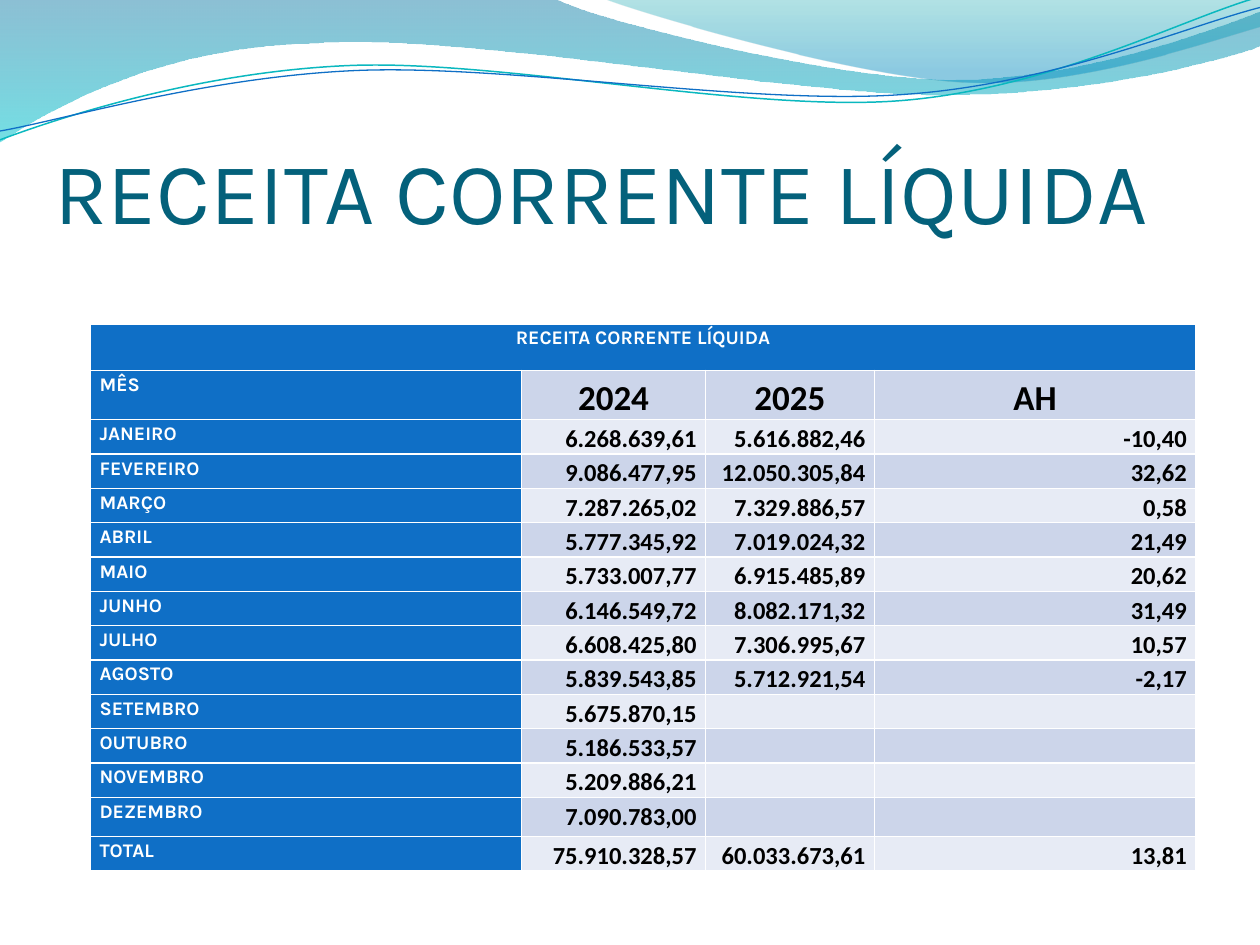
"""Build the net current revenue slide with its wave header and monthly table."""
from math import cos, radians, sin

from lxml import etree
from pptx import Presentation
from pptx.dml.color import RGBColor
from pptx.enum import text as tx
from pptx.oxml.ns import qn
from pptx.util import Inches, Pt

LEFT, MID, RIGHT = tx.PP_ALIGN.LEFT, tx.PP_ALIGN.CENTER, tx.PP_ALIGN.RIGHT
BLUE, WHITE, BLACK = "0F6FC6", "FFFFFF", "000000"
BANDS = ["E7EBF5", "CCD5EA"]
TILT = 2.7
TITLE = "RECEITA CORRENTE LÍQUIDA"
COLS = [3.42, 1.46, 1.34, 2.55]
ROWS = [0.37] * 2 + [0.24] * 7 + [0.26] * 2 + [0.24] * 2 + [0.31, 0.26]
DATA = [
    [TITLE, "", "", ""],
    ["MÊS", "2024", "2025", "AH"],
    ["JANEIRO", "6.268.639,61", "5.616.882,46", "-10,40"],
    ["FEVEREIRO", "9.086.477,95", "12.050.305,84", "32,62"],
    ["MARÇO", "7.287.265,02", "7.329.886,57", "0,58"],
    ["ABRIL", "5.777.345,92", "7.019.024,32", "21,49"],
    ["MAIO", "5.733.007,77", "6.915.485,89", "20,62"],
    ["JUNHO", "6.146.549,72", "8.082.171,32", "31,49"],
    ["JULHO", "6.608.425,80", "7.306.995,67", "10,57"],
    ["AGOSTO", "5.839.543,85", "5.712.921,54", "-2,17"],
    ["SETEMBRO", "5.675.870,15", "", ""],
    ["OUTUBRO", "5.186.533,57", "", ""],
    ["NOVEMBRO", "5.209.886,21", "", ""],
    ["DEZEMBRO", "7.090.783,00", "", ""],
    ["TOTAL", "75.910.328,57", "60.033.673,61", "13,81"],
]
WAVES = [
    ([[(0, 0)], [(4.4, -0.01)],
      [(4.76, 0.17), (6.64, 0.63), (7.58, 0.63)],
      [(8.53, 0.63), (9.58, 0.26), (10, 0.09)], [(10.01, 0.36)],
      [(9.83, 0.44), (8.7, 0.76), (7.46, 0.75)],
      [(6.22, 0.75), (3.82, 0.28), (2.57, 0.34)],
      [(1.29, 0.36), (0.46, 0.83), (-0.01, 1.13)]],
     [(0, "0074A1", 45), (1, "00C6CF", 55)]),
    ([[(4.79, -0.01)],
      [(5.09, 0.11), (6.82, 0.62), (7.69, 0.65)],
      [(8.56, 0.69), (9.61, 0.32), (10, 0.21)], [(10, 0)]],
     [(0, "00A1A9", 30), (0.8, "008BBF", 45)]),
]
CURVES = [
    ([[(0, 1.11)],
      [(0.48, 0.93), (1.58, 0.57), (2.77, 0.52)],
      [(3.95, 0.47), (5.93, 0.89), (7.13, 0.8)],
      [(8.33, 0.71), (9.38, 0.15), (9.98, -0.02)]], (4.99, 0.58), "0AB8BF", 0.85),
    ([[(0, 1.04)],
      [(0.47, 0.96), (1.64, 0.61), (2.83, 0.56)],
      [(4.03, 0.51), (5.97, 0.84), (7.17, 0.75)],
      [(8.36, 0.67), (9.41, 0.21), (10, 0.06)]], (5, 0.59), BLUE, 0.75),
]


def rgb(code):
    return RGBColor.from_string(code)


def write(frame, words, size=14, font="Calibri", color=BLACK, bold=False,
          align=LEFT, gap=None):
    para = frame.paragraphs[0]
    para.alignment, para.line_spacing = align, gap
    if not words:
        etree.SubElement(para._p, qn("a:endParaRPr"), sz=str(size * 100))
        return
    run = para.add_run()
    run.text = words
    run.font.size, run.font.name, run.font.bold = Pt(size), font, bold
    run.font.color.rgb = rgb(color)


def turn(point, hub):
    angle = radians(TILT)
    dx, dy = point[0] - hub[0], point[1] - hub[1]
    return (hub[0] + dx * cos(angle) - dy * sin(angle),
            hub[1] + dx * sin(angle) + dy * cos(angle))


class Deck:
    """Hold the style and the current slide."""

    def __init__(self):
        self.show = Presentation()
        self.show.slide_width, self.show.slide_height = Inches(10), Inches(7.5)
        self.slide = self.show.slides.add_slide(self.show.slide_layouts[5])
        self.label = dict(size=11, font="Karla", color=WHITE)

    def outline(self, steps, close):
        points = [(Inches(x), Inches(y)) for step in steps for x, y in step]
        pen = self.slide.shapes.build_freeform(*points[0])
        pen.add_line_segments(points[1:], close=close)
        shape = pen.convert_to_shape()
        shape.shadow.inherit = False
        legs = iter(shape._element.findall(".//" + qn("a:lnTo")))
        for step in steps[1:]:
            first, *rest = [next(legs) for _ in step]
            if rest:
                first.tag = qn("a:cubicBezTo")
                for leg in rest:
                    first.append(leg[0])
                    leg.getparent().remove(leg)
        return shape

    def wave(self, steps, stops):
        shape = self.outline(steps, True)
        shape.line.fill.background()
        shape.fill.gradient()
        shape.fill.gradient_angle = 270
        for stop, (place, color, _) in zip(shape.fill.gradient_stops, stops):
            stop.position, stop.color.rgb = place, rgb(color)
        tints = shape._element.spPr.findall(".//" + qn("a:gs") + "/" + qn("a:srgbClr"))
        for tint, (_, _, alpha) in zip(tints, stops):
            etree.SubElement(tint, qn("a:alpha"), val=str(alpha * 1000))

    def curve(self, steps, hub, color, width):
        flat = [[turn(point, hub) for point in step] for step in steps]
        shape = self.outline(flat, False)
        shape.rotation = -TILT
        shape.fill.background()
        shape.line.color.rgb, shape.line.width = rgb(color), Pt(width)

    def title(self, words):
        shape = self.slide.shapes.title
        shape.left, shape.top = Inches(0.43), Inches(0.99)
        shape.width, shape.height = Inches(9.08), Inches(0.93)
        frame = shape.text_frame
        frame.auto_size = tx.MSO_AUTO_SIZE.NONE
        frame.word_wrap, frame.vertical_anchor = True, tx.MSO_ANCHOR.BOTTOM
        frame.margin_left = frame.margin_right = frame.margin_bottom = 0
        frame.margin_top = Inches(0.05)
        write(frame, words, size=50, font="Karla", color="04617B")
        self.slide.shapes._spTree.append(shape._element)

    def cell(self, cell, row, col, words):
        cell.margin_left = cell.margin_right = Inches(0.07)
        cell.margin_top = cell.margin_bottom = 0
        head = row == 0 or col == 0
        cell.fill.solid()
        cell.fill.fore_color.rgb = rgb(BLUE if head else BANDS[row % 2])
        look = self.label if head else dict(size=20 if row == 1 else 14)
        align = MID if row == 0 or (row == 1 and col) else RIGHT if col else LEFT
        write(cell.text_frame, words, bold=True, align=align, gap=1.15, **look)

    def table(self, data):
        grid = self.slide.shapes.add_table(
            len(ROWS), len(COLS), Inches(0.72), Inches(2.57),
            Inches(sum(COLS)), Inches(sum(ROWS))).table
        grid.first_col = True
        for col, width in zip(grid.columns, COLS):
            col.width = Inches(width)
        for row, height in zip(grid.rows, ROWS):
            row.height = Inches(height)
        for r, line in enumerate(data):
            for c, words in enumerate(line):
                self.cell(grid.cell(r, c), r, c, words)
        grid.cell(0, 0).merge(grid.cell(0, len(COLS) - 1))


def main():
    deck = Deck()
    for wave in WAVES:
        deck.wave(*wave)
    for curve in CURVES:
        deck.curve(*curve)
    deck.title(TITLE)
    deck.table(DATA)
    deck.show.save("out.pptx")


if __name__ == "__main__":
    main()
